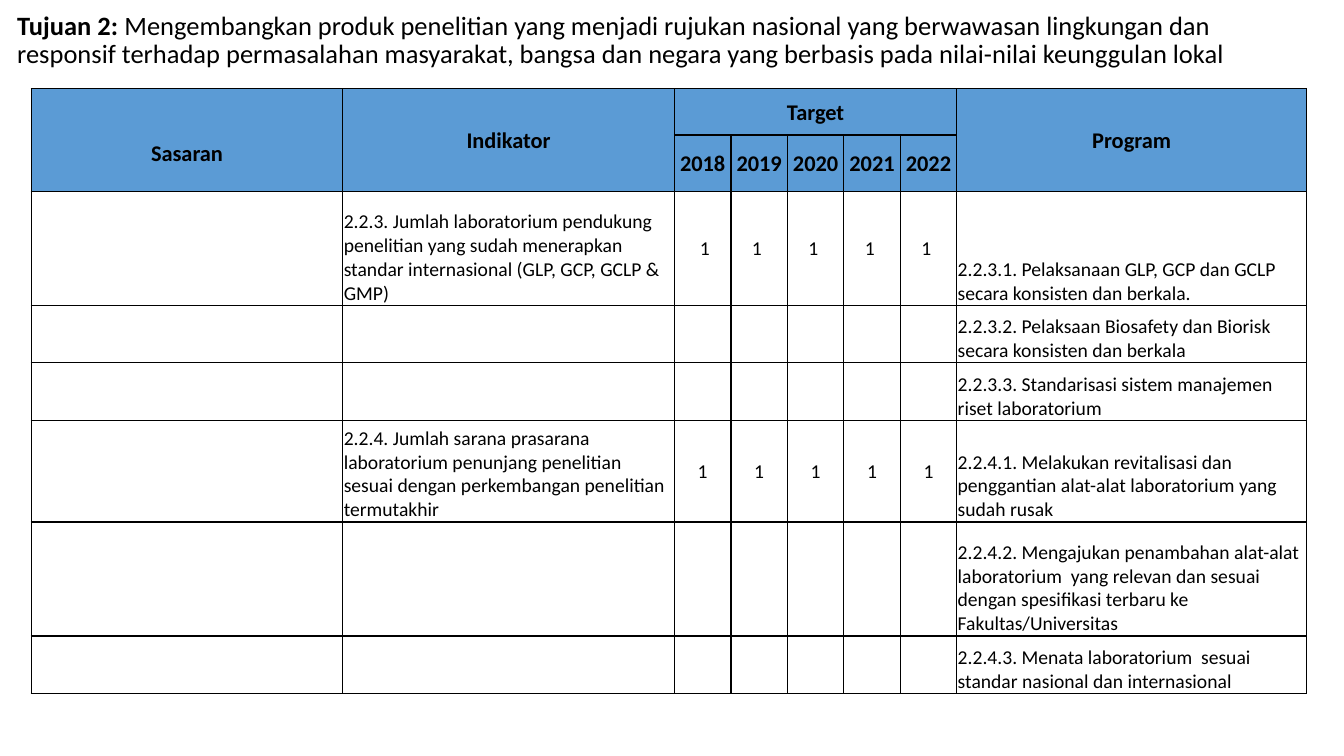
"""Build the slide of targets, indicators and programmes for Tujuan 2."""
from dataclasses import dataclass

from lxml.etree import SubElement
from pptx import Presentation
from pptx.dml.color import RGBColor
from pptx.enum.text import MSO_ANCHOR, MSO_AUTO_SIZE, PP_ALIGN
from pptx.oxml.ns import qn
from pptx.slide import Slide
from pptx.table import Table, _Cell
from pptx.util import Inches, Pt


@dataclass(frozen=True)
class Theme:
    font: str = "Calibri"
    ink: RGBColor = RGBColor(0x00, 0x00, 0x00)
    header_fill: RGBColor = RGBColor(0x5B, 0x9B, 0xD5)
    title_size: float = 18.9
    header_size: float = 16
    body_size: float = 14
    border: float = 1


@dataclass(frozen=True)
class Heading:
    text: str
    row: int
    column: int
    last_row: int
    last_column: int
    top_inset: float = 0.01


@dataclass(frozen=True)
class Activity:
    height: float
    program: str
    indicator: str = ""
    targets: tuple[str, ...] = ("",) * 5


THEME = Theme()
YEARS = range(2018, 2023)
FIRST_YEAR_COLUMN = 2
PROGRAM_COLUMN = FIRST_YEAR_COLUMN + len(YEARS)
COLUMN_WIDTHS = [3.09, 3.29] + [0.56] * len(YEARS) + [3.47]
HEADER_HEIGHTS = [0.46, 0.56]
GOAL_LABEL = "Tujuan 2: "
GOAL = (
    "Mengembangkan produk penelitian yang menjadi rujukan nasional yang berwawasan "
    "lingkungan dan responsif terhadap permasalahan masyarakat, bangsa dan negara "
    "yang berbasis pada nilai-nilai keunggulan lokal"
)
HEADINGS = [
    Heading("Sasaran", 0, 0, 1, 0, top_inset=0.28),
    Heading("Indikator", 0, 1, 1, 1),
    Heading("Target", 0, FIRST_YEAR_COLUMN, 0, PROGRAM_COLUMN - 1),
    Heading("Program", 0, PROGRAM_COLUMN, 1, PROGRAM_COLUMN),
] + [
    Heading(str(year), 1, column, 1, column)
    for column, year in enumerate(YEARS, FIRST_YEAR_COLUMN)
]
ACTIVITIES = [
    Activity(
        1.13,
        "2.2.3.1. Pelaksanaan GLP, GCP dan GCLP secara konsisten dan berkala.",
        "2.2.3. Jumlah laboratorium pendukung penelitian yang sudah menerapkan "
        "standar internasional (GLP, GCP, GCLP & GMP)",
        (" 1",) + ("1 ",) * 4,
    ),
    Activity(0.57, "2.2.3.2. Pelaksaan Biosafety dan Biorisk secara konsisten dan berkala"),
    Activity(0.57, "2.2.3.3. Standarisasi sistem manajemen riset laboratorium"),
    Activity(
        1.01,
        "2.2.4.1. Melakukan revitalisasi dan penggantian alat-alat laboratorium yang sudah rusak",
        "2.2.4. Jumlah sarana prasarana laboratorium penunjang penelitian sesuai "
        "dengan perkembangan penelitian termutakhir",
        ("1",) * 5,
    ),
    Activity(
        1.13,
        "2.2.4.2. Mengajukan penambahan alat-alat laboratorium  yang relevan dan "
        "sesuai dengan spesifikasi terbaru ke Fakultas/Universitas",
    ),
    Activity(0.57, "2.2.4.3. Menata laboratorium  sesuai standar nasional dan internasional"),
]


def outline(cell: _Cell) -> None:
    properties = cell._tc.get_or_add_tcPr()
    for side in ("a:lnL", "a:lnR", "a:lnT", "a:lnB"):
        line = SubElement(properties, qn(side), w=str(Pt(THEME.border)))
        SubElement(SubElement(line, qn("a:solidFill")), qn("a:srgbClr"), val=str(THEME.ink))


def write(
    cell: _Cell,
    text: str,
    size: float,
    align: PP_ALIGN,
    anchor: MSO_ANCHOR,
    bold: bool = False,
    top_inset: float = 0.01,
) -> None:
    cell.margin_left = cell.margin_right = Inches(0.01)
    cell.margin_top, cell.margin_bottom = Inches(top_inset), 0
    cell.vertical_anchor = anchor
    cell.text = text
    paragraph = cell.text_frame.paragraphs[0]
    paragraph.alignment = align
    paragraph.font.name = THEME.font
    paragraph.font.size = Pt(size)
    paragraph.font.bold = bold
    paragraph.font.color.rgb = THEME.ink


def add_goal(slide: Slide) -> None:
    title = slide.shapes.title
    title.left, title.top = Inches(0.07), Inches(0.06)
    title.width, title.height = Inches(12.24), Inches(0.69)
    frame = title.text_frame
    frame.word_wrap = True
    frame.auto_size = MSO_AUTO_SIZE.NONE
    frame.vertical_anchor = MSO_ANCHOR.MIDDLE
    paragraph = frame.paragraphs[0]
    paragraph.alignment = PP_ALIGN.LEFT
    paragraph.line_spacing = 0.9
    paragraph.font.name = THEME.font
    paragraph.font.size = Pt(THEME.title_size)
    paragraph.font.color.rgb = THEME.ink
    label = paragraph.add_run()
    label.text = GOAL_LABEL
    label.font.bold = True
    paragraph.add_run().text = GOAL


def add_plan(slide: Slide) -> Table:
    heights = HEADER_HEIGHTS + [activity.height for activity in ACTIVITIES]
    plan = slide.shapes.add_table(
        len(heights), len(COLUMN_WIDTHS), Inches(0.31), Inches(0.88),
        Inches(sum(COLUMN_WIDTHS)), Inches(sum(heights)),
    ).table
    plan.first_row = plan.horz_banding = False
    for column, width in zip(plan.columns, COLUMN_WIDTHS):
        column.width = Inches(width)
    for index, (row, height) in enumerate(zip(plan.rows, heights)):
        row.height = Inches(height)
        for cell in row.cells:
            outline(cell)
            if index < len(HEADER_HEIGHTS):
                cell.fill.solid()
                cell.fill.fore_color.rgb = THEME.header_fill
            else:
                cell.fill.background()
    return plan


def fill_plan(plan: Table) -> None:
    for heading in HEADINGS:
        cell = plan.cell(heading.row, heading.column)
        last = plan.cell(heading.last_row, heading.last_column)
        if (heading.row, heading.column) != (heading.last_row, heading.last_column):
            cell.merge(last)
        write(cell, heading.text, THEME.header_size, PP_ALIGN.CENTER,
              MSO_ANCHOR.MIDDLE, bold=True, top_inset=heading.top_inset)
    for row, activity in enumerate(ACTIVITIES, len(HEADER_HEIGHTS)):
        for column, text in ((1, activity.indicator), (PROGRAM_COLUMN, activity.program)):
            write(plan.cell(row, column), text, THEME.body_size, PP_ALIGN.LEFT, MSO_ANCHOR.BOTTOM)
        for column, target in enumerate(activity.targets, FIRST_YEAR_COLUMN):
            write(plan.cell(row, column), target, THEME.body_size,
                  PP_ALIGN.CENTER, MSO_ANCHOR.MIDDLE)


def main() -> None:
    deck = Presentation()
    deck.slide_width, deck.slide_height = Inches(13.33), Inches(7.5)
    slide = deck.slides.add_slide(deck.slide_layouts[5])
    add_goal(slide)
    fill_plan(add_plan(slide))
    deck.save("out.pptx")


if __name__ == "__main__":
    main()
